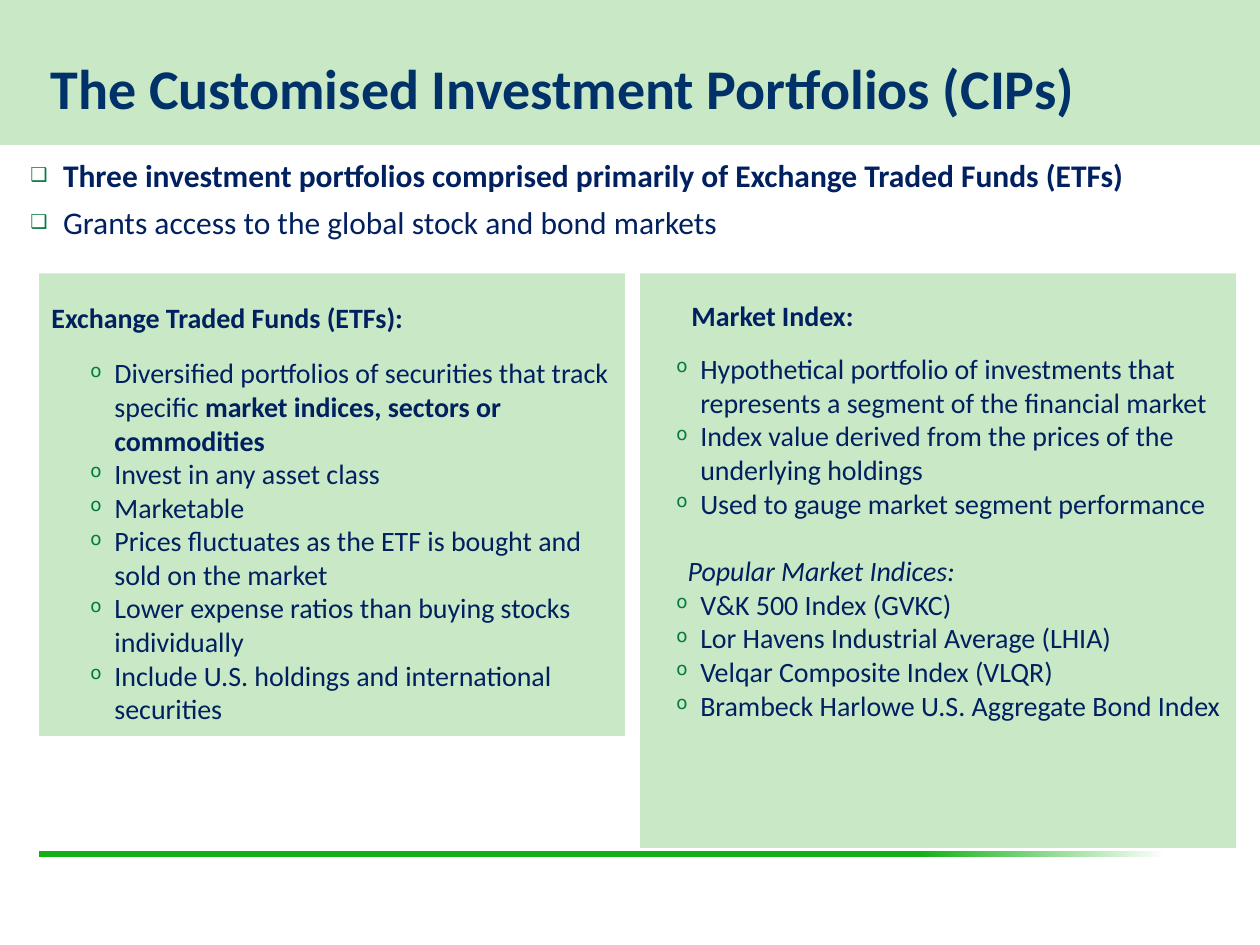
import pptx
import pptx.util
import pptx.dml.color
import pptx.enum.shapes
import pptx.enum.text
import pptx.oxml
import pptx.oxml.ns

Pt, Inches = pptx.util.Pt, pptx.util.Inches
TextEnum = pptx.enum.text
COLS, ROWS = 100, 75
GREEN, NAVY, TITLE, BULLET, RULE = "C8E8C6", "002060", "003168", "037A3E", "11B115"


def rgb(value):
    return pptx.dml.color.RGBColor.from_string(value)


def add_run(p, text, size=16, color=NAVY, bold=False, italic=False):
    r = p.add_run()
    r.text = text
    r.font.name, r.font.size = "Calibri", Pt(size)
    r.font.bold, r.font.italic = bold, italic
    r.font.color.rgb = rgb(color)
    return r


def set_bullet(p, char=None, share=100, left=0, hang=0):
    pPr = p._p.get_or_add_pPr()
    pPr.set("marL", str(Inches(left)))
    pPr.set("indent", str(-Inches(hang)))
    ns = pptx.oxml.ns.nsdecls("a")
    parts = [f"<a:buNone {ns}/>"]
    if char:
        parts = [f'<a:buClr {ns}><a:srgbClr val="{BULLET}"/></a:buClr>',
                 f'<a:buSzPct {ns} val="{share * 1000}"/>',
                 f'<a:buChar {ns} char="{char}"/>']
    for part in parts:
        pPr.append(pptx.oxml.parse_xml(part))


class Deck:
    def __init__(self):
        self.prs = pptx.Presentation()
        self.prs.slide_width, self.prs.slide_height = Inches(10), Inches(7.5)
        self.s = self.prs.slides.add_slide(self.prs.slide_layouts[1])

    def area(self, col, row, cols, rows):
        x, y = self.prs.slide_width / COLS, self.prs.slide_height / ROWS
        return [int(v) for v in (col * x, row * y, cols * x, rows * y)]

    def frame(self, sp, anchor="TOP", insets=(0, 0, 0, 0)):
        tf = sp.text_frame
        tf.word_wrap = True
        tf.auto_size = TextEnum.MSO_AUTO_SIZE.NONE
        tf.vertical_anchor = getattr(TextEnum.MSO_ANCHOR, anchor)
        (tf.margin_left, tf.margin_top,
         tf.margin_right, tf.margin_bottom) = [Inches(v) for v in insets]
        return tf

    def paragraph(self, tf, first=False, before=0, after=0, spacing=1.0):
        p = tf.paragraphs[0] if first else tf.add_paragraph()
        p.alignment = TextEnum.PP_ALIGN.LEFT
        p.space_before, p.space_after = Pt(before), Pt(after)
        p.line_spacing = spacing
        return p

    def placeholder(self, index, *area, **frame):
        sp = self.s.placeholders[index]
        sp.left, sp.top, sp.width, sp.height = self.area(*area)
        return self.frame(sp, **frame)

    def title(self, text, *area):
        tf = self.placeholder(0, *area, anchor="MIDDLE")
        p = self.paragraph(tf, first=True, spacing=0.9)
        add_run(p, text, size=32, color=TITLE, bold=True)

    def body(self, items, *area, top):
        tf = self.placeholder(1, *area, insets=(0, top, 0, 0))
        for i, (text, bold) in enumerate(items):
            p = self.paragraph(tf, first=i == 0, after=7.5, spacing=0.9)
            set_bullet(p, "❑", 61, 0.5, 0.26)
            add_run(p, text, size=18, bold=bold)

    def rect(self, *area, fill=GREEN):
        sp = self.s.shapes.add_shape(pptx.enum.shapes.MSO_SHAPE.RECTANGLE, *self.area(*area))
        sp.shadow.inherit = False
        sp.line.fill.background()
        sp.fill.solid()
        sp.fill.fore_color.rgb = rgb(fill)
        return sp

    def band(self, *area):
        sp = self.rect(*area)
        self.s.shapes._spTree.insert(2, sp._element)

    def fading_rule(self, *area):
        sp = self.rect(*area)
        sp.fill.gradient()
        sp.fill.gradient_angle = 0
        for stop, (pos, color) in zip(sp.fill.gradient_stops, [(0.74, RULE), (0.95, "FFFFFF")]):
            stop.position = pos
            stop.color.rgb = rgb(color)

    def panel(self, heading, groups, *area, gap, heading_left, left):
        """Groups are (subheading, items); an item is a list of (text, bold)."""
        tf = self.frame(self.rect(*area), insets=(0.1, 0.05 + gap / 72, 0.1, 0.05))
        p = self.paragraph(tf, first=True, after=gap)
        set_bullet(p, left=heading_left)
        add_run(p, heading, bold=True)
        for subheading, items in groups:
            if subheading:
                p = self.paragraph(tf, before=19.5)
                set_bullet(p, left=left - 0.1)
                add_run(p, subheading, italic=True)
            for item in items:
                p = self.paragraph(tf)
                set_bullet(p, "o", 66, left, 0.19)
                for text, bold in item:
                    add_run(p, text, bold=bold)


def plain(*texts):
    return [[(text, False)] for text in texts]


def main():
    d = Deck()

    # Header and introduction
    d.band(0, -0.1, 100.2, 11.6)
    d.title("The Customised Investment Portfolios (CIPs)", 4, 5, 95.3, 4.5)
    d.body([("Three investment portfolios comprised primarily of Exchange Traded Funds (ETFs)", True),
            ("Grants access to the global stock and bond markets", False)],
           0, 8.9, 100.8, 8.2, top=0.38)

    # Left panel: funds
    funds = [[("Diversified portfolios of securities that track specific ", False),
              ("market indices, sectors or commodities", True)]]
    funds += plain("Invest in any asset class",
                   "Marketable",
                   "Prices fluctuates as the ETF is bought and sold on the market",
                   "Lower expense ratios than buying stocks individually",
                   "Include U.S. holdings and international securities")
    d.panel("Exchange Traded Funds (ETFs):", [(None, funds)],
            3.1, 21.7, 46.5, 36.7, gap=12.2, heading_left=0, left=0.5)

    # Footer rule
    d.fading_rule(3.1, 67.5, 94.2, 0.5)

    # Right panel: indices
    traits = plain("Hypothetical portfolio of investments that represents a segment of the financial market",
                   "Index value derived from the prices of the underlying holdings",
                   "Used to gauge market segment performance")
    indices = plain("V&K 500 Index (GVKC)",
                    "Lor Havens Industrial Average (LHIA)",
                    "Velqar Composite Index (VLQR)",
                    "Brambeck Harlowe U.S. Aggregate Bond Index")
    d.panel("Market Index:", [(None, traits), ("Popular Market Indices:", indices)],
            50.8, 21.7, 47.3, 45.6, gap=11, heading_left=0.31, left=0.38)

    d.prs.save("out.pptx")


if __name__ == "__main__":
    main()
